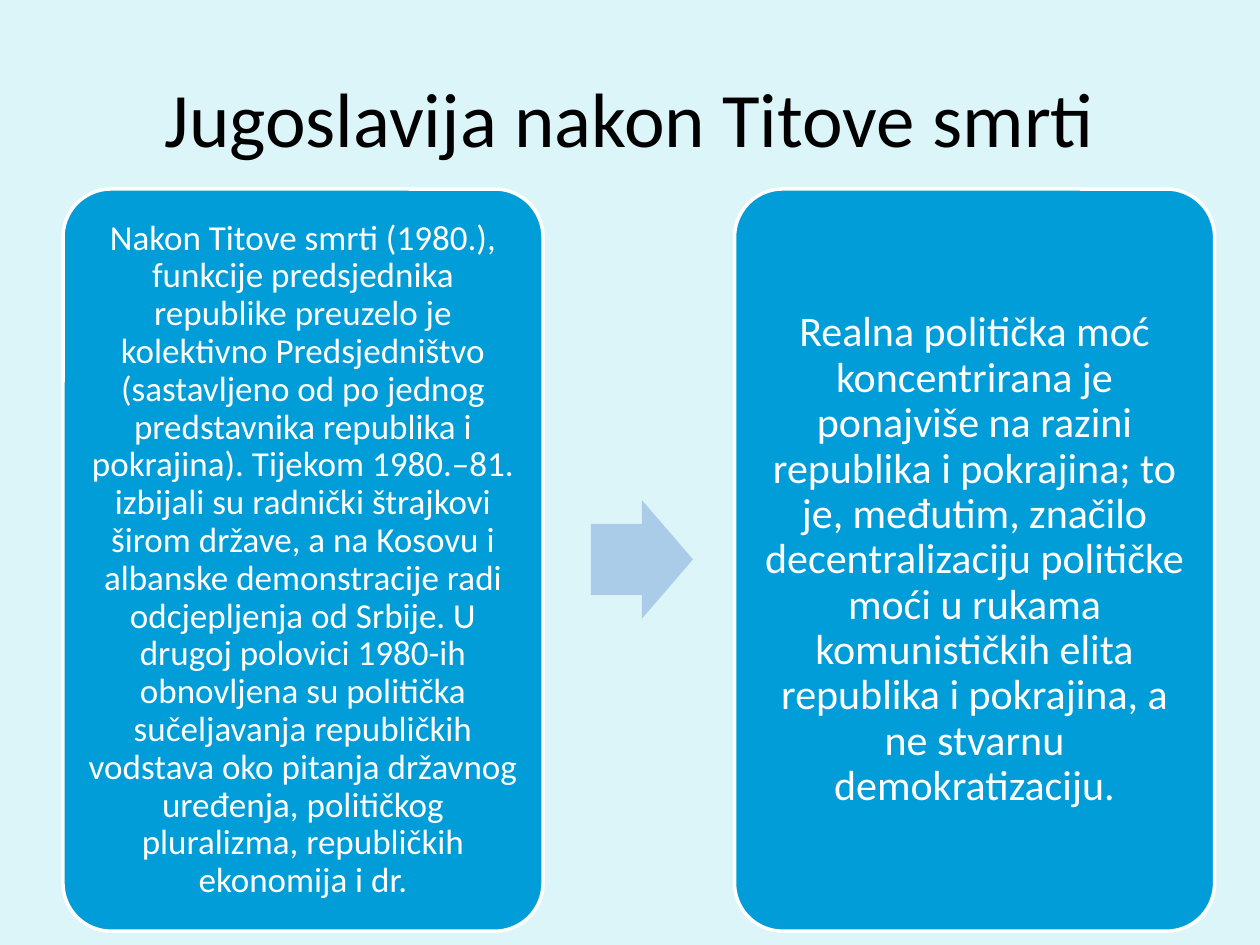
import pptx
import pptx.util
import pptx.dml.color
import pptx.enum.shapes
import pptx.enum.text

Inches, Pt = pptx.util.Inches, pptx.util.Pt
RGB = pptx.dml.color.RGBColor.from_string
MSO_SHAPE = pptx.enum.shapes.MSO_SHAPE
COLORS = {"background": "DBF5F9", "card": "009DD9", "arrow": "ABCCE9",
          "light": "FFFFFF", "dark": "000000"}


def write_text(sp, text, size, color, inset, spacing):
    tf = sp.text_frame
    frame_format = {"word_wrap": True,
                    "vertical_anchor": pptx.enum.text.MSO_ANCHOR.MIDDLE}
    for side in ("left", "top", "right", "bottom"):
        frame_format["margin_" + side] = Inches(inset)
    for name, value in frame_format.items():
        setattr(tf, name, value)
    p = tf.paragraphs[0]
    p.alignment = pptx.enum.text.PP_ALIGN.CENTER
    p.line_spacing = spacing
    r = p.add_run()
    r.text = text
    for name, value in {"name": "Calibri", "size": Pt(size)}.items():
        setattr(r.font, name, value)
    r.font.color.rgb = RGB(COLORS[color])


def add_filled(s, kind, box, fill, adjustments):
    sp = s.shapes.add_shape(kind, *[Inches(v) for v in box])
    sp.shadow.inherit = False
    sp.fill.solid()
    sp.fill.fore_color.rgb = RGB(COLORS[fill])
    sp.line.fill.background()
    for i, value in enumerate(adjustments):
        sp.adjustments[i] = value
    return sp


prs = pptx.Presentation()
prs.slide_width, prs.slide_height = Inches(10), Inches(7.5)
s = prs.slides.add_slide(prs.slide_layouts[6])
s.background.fill.solid()
s.background.fill.fore_color.rgb = RGB(COLORS["background"])

# Title
sp = s.shapes.add_textbox(Inches(0.5), Inches(0.3), Inches(9), Inches(1.25))
write_text(sp, "Jugoslavija nakon Titove smrti", 44, "dark", 0.05, 1.0)

# Two cards: left, text size, inset, text
cards = [
    (0.5, 20, 0.08,
     "Nakon Titove smrti (1980.), funkcije predsjednika republike preuzelo je "
     "kolektivno Predsjedništvo (sastavljeno od po jednog predstavnika republika "
     "i pokrajina). Tijekom 1980.–81. izbijali su radnički štrajkovi širom "
     "države, a na Kosovu i albanske demonstracije radi odcjepljenja od Srbije. "
     "U drugoj polovici 1980-ih obnovljena su politička sučeljavanja "
     "republičkih vodstava oko pitanja državnog uređenja, političkog "
     "pluralizma, republičkih ekonomija i dr."),
    (5.83, 24, 0.1,
     "Realna politička moć koncentrirana je ponajviše na razini republika i "
     "pokrajina; to je, međutim, značilo decentralizaciju političke moći u "
     "rukama komunističkih elita republika i pokrajina, a ne stvarnu "
     "demokratizaciju."),
]
for left, size, inset, text in cards:
    sp = add_filled(s, MSO_SHAPE.ROUNDED_RECTANGLE, (left, 1.5, 3.81, 5.89),
                    "card", [0.1])
    sp.line.color.rgb = RGB(COLORS["light"])
    sp.line.width = Pt(2)
    write_text(sp, text, size, "light", inset, 0.9)

# Arrow between the cards
add_filled(s, MSO_SHAPE.RIGHT_ARROW, (4.69, 3.97, 0.81, 0.94), "arrow", [0.6, 0.5])

prs.save("out.pptx")
